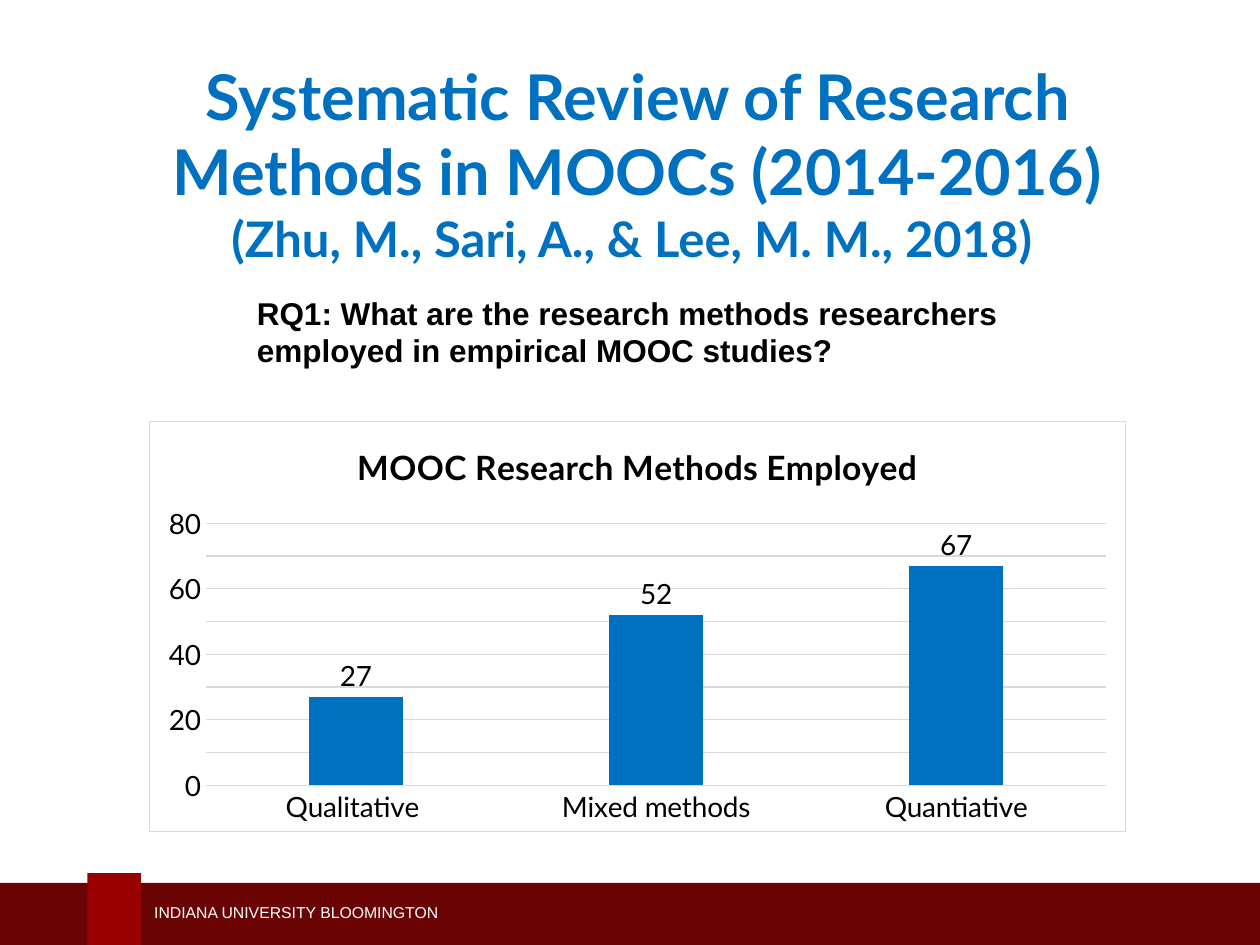
"""Build a slide on the research methods used in MOOC studies."""
from dataclasses import dataclass

import lxml.etree
import pptx
import pptx.chart.data
import pptx.dml.color
import pptx.enum.chart
import pptx.enum.shapes
import pptx.enum.text
import pptx.oxml
import pptx.oxml.ns
import pptx.util

Pt = pptx.util.Pt
ALIGN = pptx.enum.text.PP_ALIGN
ANCHOR = pptx.enum.text.MSO_ANCHOR


@dataclass(frozen=True)
class Theme:
    blue: str = "0070C0"
    crimson: str = "990000"
    maroon: str = "690304"
    grid: str = "D9D9D9"
    black: str = "000000"
    white: str = "FFFFFF"
    heading: str = "Lato"
    body: str = "Arial"
    title: float = 36
    subtitle: float = 28
    question: float = 18
    chart_title: float = 19.2
    chart: float = 16
    footer: float = 9
    hairline: float = 0.75


THEME = Theme()


def rgb(color):
    return pptx.dml.color.RGBColor.from_string(color)


def format_font(font, name, size, color, bold=False):
    font.name = name
    font.size = Pt(size)
    font.bold = bold
    font.color.rgb = rgb(color)


def place(item, left, top, width, height):
    item.left, item.top, item.width, item.height = map(Pt, (left, top, width, height))


def add_span(para, text, **style):
    span = para.add_run()
    span.text = text
    format_font(span.font, **style)


def add_bar(page, bounds, color):
    kind = pptx.enum.shapes.MSO_SHAPE.RECTANGLE
    bar = page.shapes.add_shape(kind, *map(Pt, bounds))
    bar.shadow.inherit = False
    bar.fill.solid()
    bar.fill.fore_color.rgb = rgb(color)
    bar.line.fill.background()


def add_text(page, bounds, text, anchor=ANCHOR.TOP, **style):
    box = page.shapes.add_textbox(*map(Pt, bounds))
    box.text_frame.word_wrap = True
    box.text_frame.vertical_anchor = anchor
    add_span(box.text_frame.paragraphs[0], text, **style)


def set_title(page, bounds, heading, citation):
    title = page.shapes.title
    place(title, *bounds)
    title.fill.solid()
    title.fill.fore_color.rgb = rgb(THEME.white)
    frame = title.text_frame
    frame.word_wrap = True
    frame.auto_size = pptx.enum.text.MSO_AUTO_SIZE.NONE
    frame.vertical_anchor = ANCHOR.MIDDLE
    para = frame.paragraphs[0]
    para.alignment = ALIGN.CENTER
    style = dict(name=THEME.heading, color=THEME.blue, bold=True)
    add_span(para, heading, size=THEME.title, **style)
    para.add_line_break()
    add_span(para, citation, size=THEME.subtitle, **style)


def format_line(line, color):
    line.color.rgb = rgb(color)
    line.width = Pt(THEME.hairline)


def frame_chart(chart):
    """Give the chart area its white fill and thin border."""
    namespaces = pptx.oxml.ns.nsdecls("c", "a")
    area = pptx.oxml.parse_xml(
        f'<c:spPr {namespaces}><a:solidFill><a:srgbClr val="{THEME.white}"/></a:solidFill>'
        f'<a:ln w="{Pt(THEME.hairline)}"><a:solidFill><a:srgbClr val="{THEME.grid}"/>'
        "</a:solidFill></a:ln></c:spPr>"
    )
    chart.element.find(pptx.oxml.ns.qn("c:chart")).addnext(area)


def format_axes(chart):
    ticks = pptx.enum.chart.XL_TICK_MARK
    for axis in (chart.category_axis, chart.value_axis):
        axis.major_tick_mark = axis.minor_tick_mark = ticks.NONE
    format_line(chart.category_axis.format.line, THEME.grid)
    values = chart.value_axis
    values.format.line.fill.background()
    values.minimum_scale, values.maximum_scale, values.major_unit = 0, 80, 10
    format_line(values.major_gridlines.format.line, THEME.grid)


def add_column_chart(page, bounds, title, categories, values):
    data = pptx.chart.data.CategoryChartData()
    data.categories = categories
    data.add_series("Series 1", values)
    kind = pptx.enum.chart.XL_CHART_TYPE.COLUMN_CLUSTERED
    chart = page.shapes.add_chart(kind, *map(Pt, bounds), data).chart
    format_font(chart.font, THEME.heading, THEME.chart, THEME.black)
    frame_chart(chart)
    chart.has_legend = False
    chart.has_title = True
    add_span(chart.chart_title.text_frame.paragraphs[0], title, name=THEME.heading,
             size=THEME.chart_title, color=THEME.black, bold=True)
    chart.chart_title.include_in_layout = False
    format_axes(chart)
    plot = chart.plots[0]
    plot.vary_by_categories = False
    plot.gap_width, plot.overlap = 219, -27
    series = plot.series[0]
    series.format.fill.solid()
    series.format.fill.fore_color.rgb = rgb(THEME.blue)
    labels = series.data_labels
    labels.show_value = True
    labels.position = pptx.enum.chart.XL_LABEL_POSITION.OUTSIDE_END
    format_font(labels.font, THEME.heading, THEME.chart, THEME.black)


def main():
    deck = pptx.Presentation()
    deck.slide_width, deck.slide_height = Pt(720), Pt(540)
    page = deck.slides.add_slide(deck.slide_layouts[5])
    add_bar(page, (-2, 504.6, 726, 36), THEME.maroon)
    add_bar(page, (50, 499, 30.5, 41.6), THEME.crimson)
    add_text(page, (81, 512, 284.4, 18), "INDIANA UNIVERSITY BLOOMINGTON",
             anchor=ANCHOR.MIDDLE, name=THEME.body, size=THEME.footer, color=THEME.white)
    set_title(page, (41, 21, 646.6, 143.3),
              "Systematic Review of Research Methods in MOOCs (2014-2016)",
              "(Zhu, M., Sari, A., & Lee, M. M., 2018) ")
    add_text(page, (139.7, 164.2, 449.3, 51),
             "RQ1: What are the research methods researchers employed in empirical MOOC studies?",
             name=THEME.body, size=THEME.question, color=THEME.black, bold=True)
    add_column_chart(page, (85, 240.7, 558.7, 234.7), "MOOC Research Methods Employed",
                     ("Qualitative ", "Mixed methods", "Quantiative"), (27, 52, 67))
    deck.save("out.pptx")


if __name__ == "__main__":
    main()
